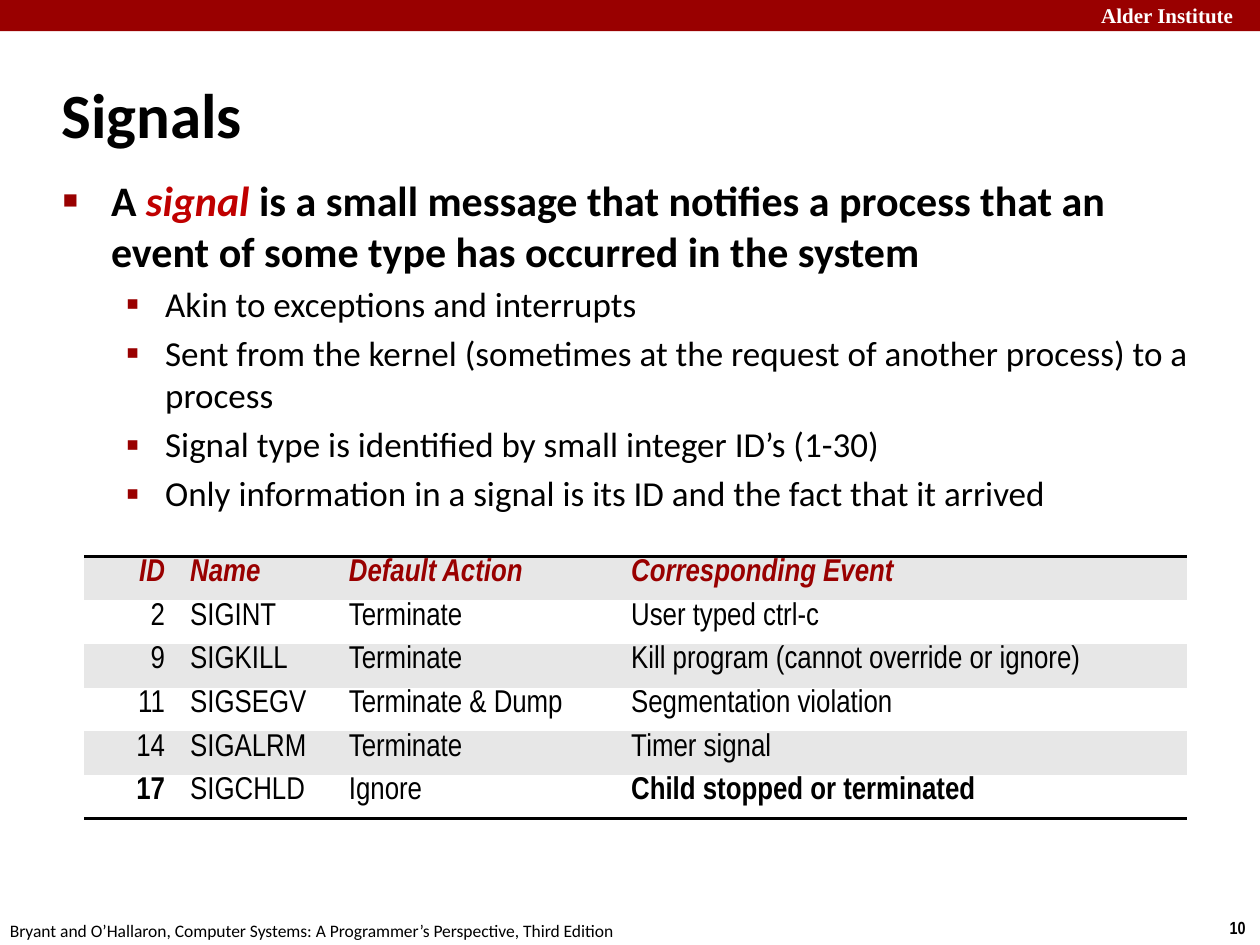
from dataclasses import dataclass

from lxml import etree
from pptx import Presentation
from pptx.dml.color import RGBColor
from pptx.enum.shapes import MSO_SHAPE
from pptx.enum.text import MSO_ANCHOR, PP_ALIGN
from pptx.oxml.ns import qn
from pptx.util import Cm, Pt

RECTANGLE = MSO_SHAPE.RECTANGLE
TOP, MIDDLE = MSO_ANCHOR.TOP, MSO_ANCHOR.MIDDLE
LEFT, RIGHT = PP_ALIGN.LEFT, PP_ALIGN.RIGHT


@dataclass(frozen=True)
class Theme:
    red: str = "990000"
    accent: str = "C00000"
    black: str = "000000"
    white: str = "FFFFFF"
    band: str = "E7E7E7"
    body_font: str = "Calibri"
    table_font: str = "Arial Narrow"
    brand_font: str = "Times New Roman"
    title_size: int = 36
    point_size: int = 24
    detail_size: int = 20
    table_size: int = 18
    brand_size: int = 12
    footer_size: int = 10


THEME = Theme()

BRAND = "Alder Institute"
TITLE = "Signals"
PAGE_NUMBER = "10"
FOOTER = "Bryant and O’Hallaron, Computer Systems: A Programmer’s Perspective, Third Edition"
POINT = [
    ("A ", {}),
    ("signal", {"color": THEME.accent, "italic": True}),
    (" is a small message that notifies a process that an event of some type has occurred in the system", {}),
]
DETAILS = [
    "Akin to exceptions and interrupts",
    "Sent from the kernel (sometimes at the request of another process) to a process",
    "Signal type is identified by small integer ID’s (1-30)",
    "Only information in a signal is its ID and the fact that it arrived",
]
SIGNALS = [
    ("ID", "Name", "Default Action", "Corresponding Event"),
    ("2", "SIGINT", "Terminate", "User typed ctrl-c"),
    ("9", "SIGKILL", "Terminate", "Kill program (cannot override or ignore)"),
    ("11", "SIGSEGV", "Terminate & Dump", "Segmentation violation"),
    ("14", "SIGALRM", "Terminate", "Timer signal"),
    ("17", "SIGCHLD", "Ignore", "Child stopped or terminated"),
]
EMPHASIZED = {"17", "Child stopped or terminated"}
COLUMN_WIDTHS = [1.88, 3.2, 5.69, 11.46]
ROW_HEIGHT = 0.88
PLAIN_TABLE = "{2D5ABB26-0587-4C30-8999-92F81FD0307C}"


def add_span(para, text, font=THEME.body_font, size=THEME.detail_size,
             color=THEME.black, bold=False, italic=False):
    span = para.add_run()
    span.text = text
    span.font.name = font
    span.font.size = Pt(size)
    span.font.bold = bold
    span.font.italic = italic
    span.font.color.rgb = RGBColor.from_string(color)


def add_box(page, left, top, width, height, wrap=True, anchor=TOP):
    box = page.shapes.add_textbox(Cm(left), Cm(top), Cm(width), Cm(height))
    box.text_frame.word_wrap = wrap
    box.text_frame.vertical_anchor = anchor
    return box.text_frame


def add_label(page, place, text, wrap=True, anchor=TOP, **style):
    frame = add_box(page, *place, wrap=wrap, anchor=anchor)
    add_span(frame.paragraphs[0], text, **style)


def add_bullet(para, mark, percent, margin, hanging):
    properties = para._p.get_or_add_pPr()
    properties.set("marL", str(Cm(margin)))
    properties.set("indent", str(-Cm(hanging)))
    color = etree.SubElement(properties, qn("a:buClr"))
    etree.SubElement(color, qn("a:srgbClr"), val=THEME.red)
    etree.SubElement(properties, qn("a:buSzPct"), val=str(percent * 1000))
    etree.SubElement(properties, qn("a:buFont"), typeface="Arial")
    etree.SubElement(properties, qn("a:buChar"), char=mark)


def add_rule(cell, side):
    line = etree.Element(qn(f"a:{side}"), w=str(Pt(2)))
    fill = etree.SubElement(line, qn("a:solidFill"))
    etree.SubElement(fill, qn("a:srgbClr"), val=THEME.black)
    cell._tc.get_or_add_tcPr().insert(0, line)


def add_banner(page, width):
    banner = page.shapes.add_shape(RECTANGLE, 0, 0, width, Cm(0.63))
    banner.shadow.inherit = False
    banner.fill.solid()
    banner.fill.fore_color.rgb = RGBColor.from_string(THEME.red)
    banner.line.fill.background()


def add_body(page):
    frame = add_box(page, 1.02, 3.4, 23.32, 7.62)
    para = frame.paragraphs[0]
    para.space_before = Pt(THEME.point_size * 0.2)
    add_bullet(para, "■", 60, 0.97, 0.97)
    for text, style in POINT:
        add_span(para, text, size=THEME.point_size, bold=True, **style)
    for text in DETAILS:
        para = frame.add_paragraph()
        para.level = 1
        para.space_before = Pt(THEME.detail_size * 0.2)
        add_bullet(para, "▪", 110, 2.06, 0.79)
        add_span(para, text)


def add_signal_table(page):
    last = len(SIGNALS) - 1
    frame = page.shapes.add_table(
        len(SIGNALS), len(COLUMN_WIDTHS), Cm(1.7), Cm(11.22),
        Cm(sum(COLUMN_WIDTHS)), Cm(ROW_HEIGHT * len(SIGNALS)))
    table = frame.table
    table.horz_banding = False
    table._tbl.tblPr.find(qn("a:tableStyleId")).text = PLAIN_TABLE
    for column, width in zip(table.columns, COLUMN_WIDTHS):
        column.width = Cm(width)
    for row_index, values in enumerate(SIGNALS):
        table.rows[row_index].height = Cm(ROW_HEIGHT)
        header = row_index == 0
        for column_index, text in enumerate(values):
            cell = table.cell(row_index, column_index)
            cell.margin_top = cell.margin_bottom = Cm(0.05)
            cell.fill.solid()
            cell.fill.fore_color.rgb = RGBColor.from_string(
                THEME.white if row_index % 2 else THEME.band)
            para = cell.text_frame.paragraphs[0]
            para.alignment = RIGHT if column_index == 0 else LEFT
            para.line_spacing = 0.95
            add_span(para, text, font=THEME.table_font, size=THEME.table_size,
                     color=THEME.red if header else THEME.black,
                     bold=header or text in EMPHASIZED, italic=header)
            if header:
                add_rule(cell, "lnT")
            elif row_index == last:
                add_rule(cell, "lnB")


def main():
    deck = Presentation()
    deck.slide_width, deck.slide_height = Cm(25.4), Cm(19.05)
    page = deck.slides.add_slide(deck.slide_layouts[6])
    add_banner(page, deck.slide_width)
    add_label(page, (21.95, -0.08, 3.63, 0.76), BRAND, font=THEME.brand_font,
              size=THEME.brand_size, color=THEME.white, bold=True)
    add_label(page, (24.54, 18.36, 0.86, 0.69), PAGE_NUMBER, wrap=False,
              font=THEME.table_font, size=THEME.footer_size, bold=True)
    add_label(page, (-0.05, 18.42, 12.9, 0.69), FOOTER, wrap=False,
              size=THEME.footer_size)
    add_label(page, (0.99, 1.22, 21.08, 2.11), TITLE, anchor=MIDDLE,
              size=THEME.title_size, bold=True)
    add_body(page)
    add_signal_table(page)
    deck.save("out.pptx")


if __name__ == "__main__":
    main()
